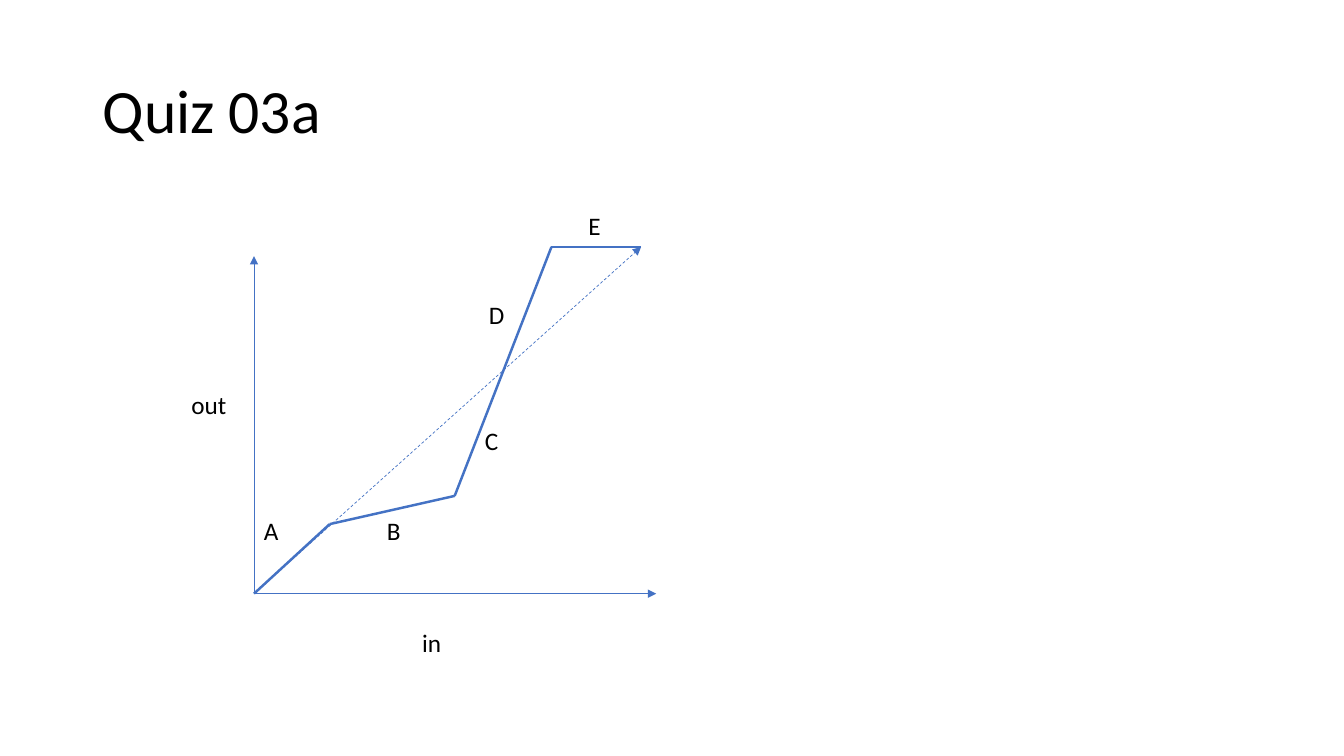
from itertools import pairwise

from lxml.etree import SubElement
from pptx import Presentation
from pptx.dml.color import RGBColor
from pptx.enum.dml import MSO_LINE
from pptx.enum.shapes import MSO_CONNECTOR
from pptx.enum.text import MSO_ANCHOR, MSO_AUTO_SIZE
from pptx.oxml.ns import qn
from pptx.util import Inches, Pt

WIDTH, HEIGHT = Inches(13.33), Inches(7.5)
COLORS = {"text": "000000", "line": "4472C4"}
LABEL_ROWS = 5.33

TITLE_FRAME = {"word_wrap": True, "vertical_anchor": MSO_ANCHOR.MIDDLE}
LABEL_FRAME = {"word_wrap": False, "auto_size": MSO_AUTO_SIZE.SHAPE_TO_FIT_TEXT}

ORIGIN = (18.9, 78.53)
OUT_AXIS_END = (18.9, 33.87)
IN_AXIS_END = (48.83, 78.53)
CURVE_END = (47.7, 32.67)
CURVE = [ORIGIN, (24.53, 69.33), (33.83, 65.6), (41.03, 32.67), CURVE_END]

LABELS = [
    ("in", 30.68, 82.27, 2.93),
    ("out", 13.5, 50.8, 4.13),
    ("A", 18.9, 67.47, 2.63),
    ("B", 28.05, 67.47, 2.63),
    ("C", 35.33, 55.6, 2.55),
    ("D", 35.63, 38.93, 2.63),
    ("E", 43.05, 27.2, 2.63),
]


def across(columns):
    return round(WIDTH * columns / 100)


def down(rows):
    return round(HEIGHT * rows / 100)


def set_values(target, values):
    for name, value in values.items():
        setattr(target, name, value)


def add_text(slide, text, left, top, width, height, size, frame_values, spacing=1.0):
    box = slide.shapes.add_textbox(across(left), down(top), across(width), down(height))
    set_values(box.text_frame, frame_values)
    paragraph = box.text_frame.paragraphs[0]
    paragraph.text = text
    paragraph.line_spacing = spacing
    font = paragraph.runs[0].font
    set_values(font, {"name": "Calibri", "size": Pt(size)})
    font.color.rgb = RGBColor.from_string(COLORS["text"])


def add_line(slide, start, end, weight):
    line = slide.shapes.add_connector(
        MSO_CONNECTOR.STRAIGHT,
        across(start[0]), down(start[1]), across(end[0]), down(end[1]),
    )
    line.line.color.rgb = RGBColor.from_string(COLORS["line"])
    line.line.width = Pt(weight)
    SubElement(line._element.spPr, qn("a:effectLst"))
    return line


def add_arrow(slide, start, end, dash=None):
    arrow = add_line(slide, start, end, 0.5)
    if dash is not None:
        arrow.line.dash_style = dash
    SubElement(arrow.line._get_or_add_ln(), qn("a:tailEnd"), type="triangle")


def main():
    presentation = Presentation()
    set_values(presentation, {"slide_width": WIDTH, "slide_height": HEIGHT})
    slide = presentation.slides.add_slide(presentation.slide_layouts[6])

    add_text(slide, "Quiz 03a", 6.9, 5.33, 86.25, 19.33, 44, TITLE_FRAME, 0.9)
    add_arrow(slide, ORIGIN, OUT_AXIS_END)
    add_arrow(slide, ORIGIN, IN_AXIS_END)
    add_arrow(slide, ORIGIN, CURVE_END, MSO_LINE.DASH)
    for start, end in pairwise(CURVE):
        add_line(slide, start, end, 1.75)
    for text, left, top, width in LABELS:
        add_text(slide, text, left, top, width, LABEL_ROWS, 18, LABEL_FRAME)

    presentation.save("out.pptx")


if __name__ == "__main__":
    main()
